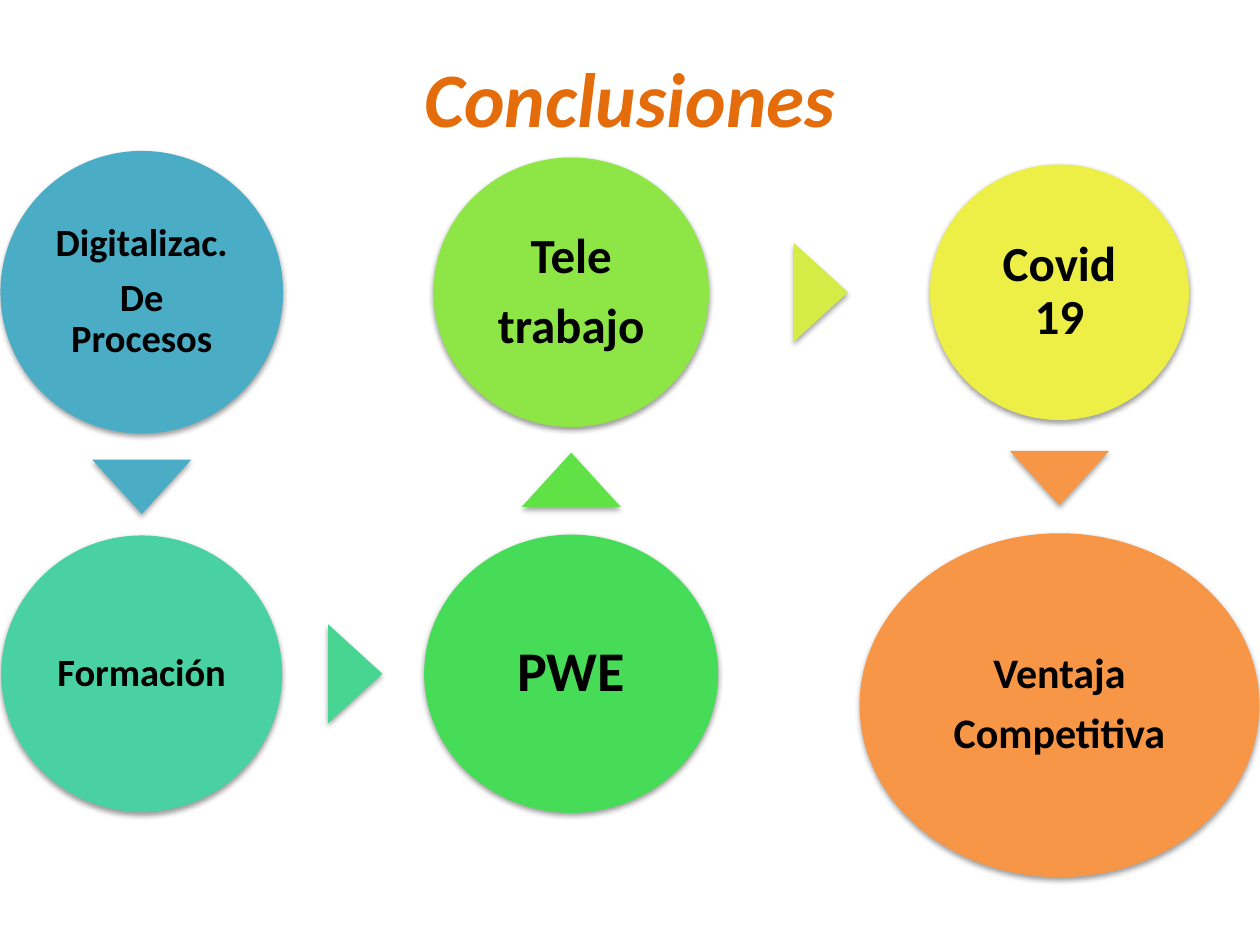
from lxml import etree
from pptx import Presentation
from pptx.dml.color import RGBColor
from pptx.enum import shapes, text
from pptx.oxml import ns
from pptx.util import Pt

BLACK = RGBColor(0x00, 0x00, 0x00)
RUST = RGBColor(0xE4, 0x6C, 0x0A)
BLUE = RGBColor(0x4B, 0xAC, 0xC6)
TEAL = RGBColor(0x49, 0xD1, 0xA3)
MINT = RGBColor(0x48, 0xD4, 0x91)
GREEN = RGBColor(0x47, 0xDC, 0x57)
GRASS = RGBColor(0x60, 0xE1, 0x46)
LIME = RGBColor(0x8D, 0xE6, 0x46)
PEAR = RGBColor(0xD5, 0xEC, 0x46)
LEMON = RGBColor(0xEE, 0xEF, 0x46)
AMBER = RGBColor(0xF7, 0x96, 0x46)

FONT = "Calibri"
LEFT, MID, RIGHT = 81, 326.4, 605.4
TOP, LOW = 167, 385

DISCS = [
    (LEFT, TOP, 161.5, 161.5, BLUE, 22, ["Digitalizac.", "De Procesos"]),
    (LEFT, LOW, 160.5, 158, TEAL, 22, ["Formación"]),
    (MID, LOW, 168, 159, GREEN, 32, ["PWE"]),
    (MID, TOP, 157.5, 154, LIME, 28, ["Tele", "trabajo"]),
    (RIGHT, TOP, 148, 146, LEMON, 28, ["Covid 19"]),
    (RIGHT, 403, 228.5, 196.5, AMBER, 24, ["Ventaja", "Competitiva"]),
]

ARROWS = [
    (LEFT, 278.2, 180, BLUE),
    (203, LOW, 90, MINT),
    (MID, 274.2, 0, GRASS),
    (469, TOP, 90, PEAR),
    (RIGHT, 273.2, 180, AMBER),
]


def write(para, words, size, color, slant=None):
    """Add one bold run to a centred paragraph."""
    para.alignment = text.PP_ALIGN.CENTER
    run = para.add_run()
    run.text = words
    font = run.font
    font.name, font.size, font.bold, font.italic = FONT, Pt(size), True, slant
    font.color.rgb = color


def shade(shape, drop, alpha):
    """Give a shape a soft shadow straight below it."""
    shape.shadow.inherit = False
    glow = shape._element.spPr.find(ns.qn("a:effectLst"))
    cast = etree.SubElement(glow, ns.qn("a:outerShdw"), blurRad=str(Pt(3.1)),
                            dist=str(Pt(drop)), dir="5400000", rotWithShape="0")
    tint = etree.SubElement(cast, ns.qn("a:srgbClr"), val=str(BLACK))
    etree.SubElement(tint, ns.qn("a:alpha"), val=str(alpha * 1000))


def add_form(slide, kind, x, y, wide, high, color):
    """Add a plain filled shape centred on a point."""
    form = slide.shapes.add_shape(kind, Pt(x - wide / 2), Pt(y - high / 2),
                                  Pt(wide), Pt(high))
    form.fill.solid()
    form.fill.fore_color.rgb = color
    form.line.fill.background()
    return form


def add_disc(slide, x, y, wide, high, color, size, lines):
    """Add a labelled ellipse."""
    disc = add_form(slide, shapes.MSO_SHAPE.OVAL, x, y, wide, high, color)
    shade(disc, 1.6, 38)
    frame = disc.text_frame
    frame.word_wrap = True
    frame.vertical_anchor = text.MSO_ANCHOR.MIDDLE
    frame.margin_left = frame.margin_right = Pt(4)
    frame.margin_top = frame.margin_bottom = Pt(2)
    for i, words in enumerate(lines):
        para = frame.add_paragraph() if i else frame.paragraphs[0]
        para.line_spacing = 0.9
        if i:
            para.space_before = Pt(size * 0.35)
        write(para, words, size, BLACK)


def add_arrow(slide, x, y, turn, color):
    """Add a triangle that points to the next disc."""
    arrow = add_form(slide, shapes.MSO_SHAPE.ISOSCELES_TRIANGLE, x, y, 56.6, 31, color)
    arrow.rotation = turn
    shade(arrow, 1.8, 35)


def set_title(slide, words):
    """Place and fill the title."""
    title = slide.shapes.title
    title.left, title.top, title.width, title.height = Pt(36), Pt(21.6), Pt(648), Pt(67)
    frame = title.text_frame
    frame.vertical_anchor = text.MSO_ANCHOR.MIDDLE
    write(frame.paragraphs[0], words, 44, RUST, True)


def main():
    """Build the slide and save it."""
    deck = Presentation()
    deck.slide_width, deck.slide_height = Pt(720), Pt(540)
    slide = deck.slides.add_slide(deck.slide_layouts[5])
    set_title(slide, "Conclusiones")
    for disc in DISCS:
        add_disc(slide, *disc)
    for arrow in ARROWS:
        add_arrow(slide, *arrow)
    deck.save("out.pptx")


if __name__ == "__main__":
    main()
